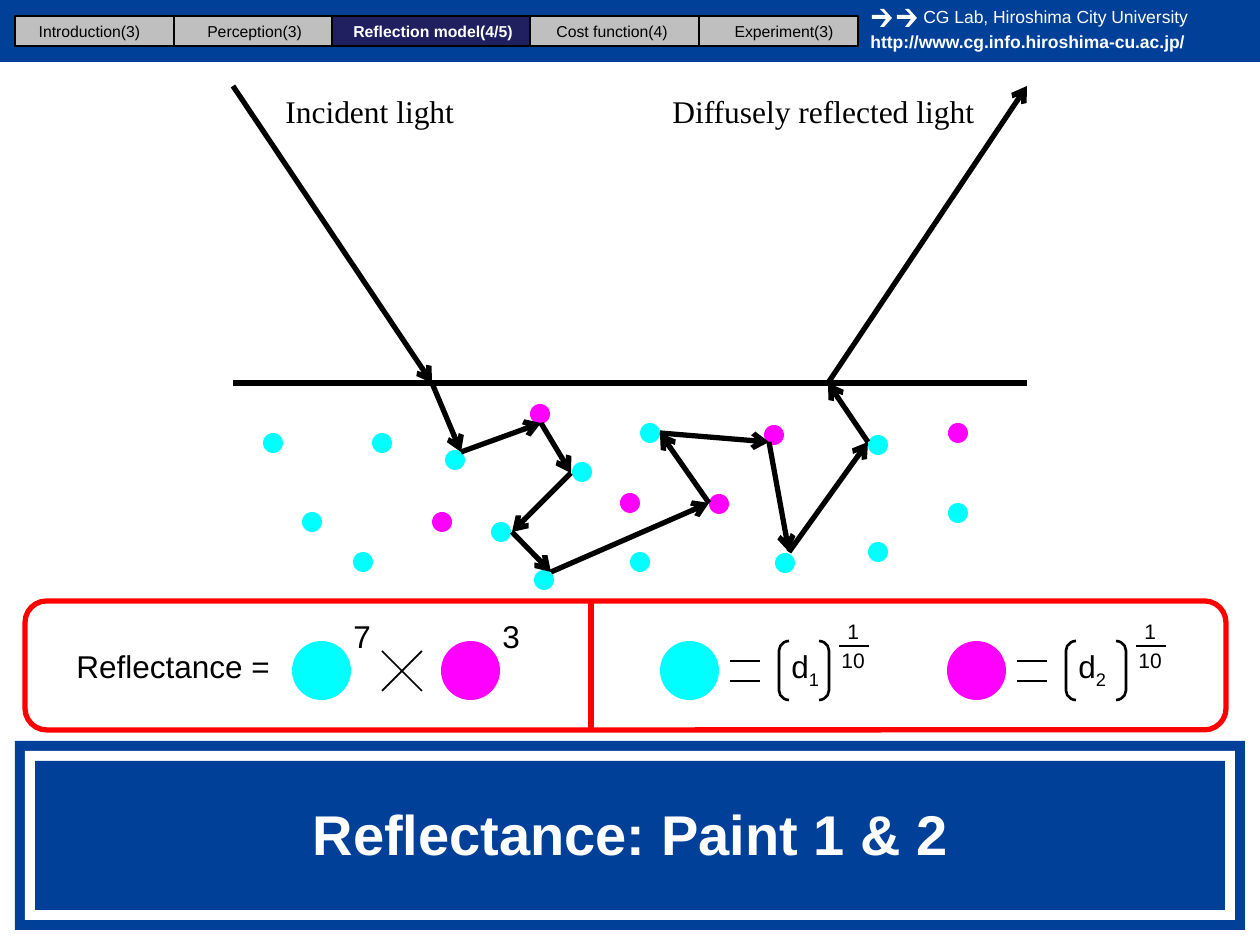
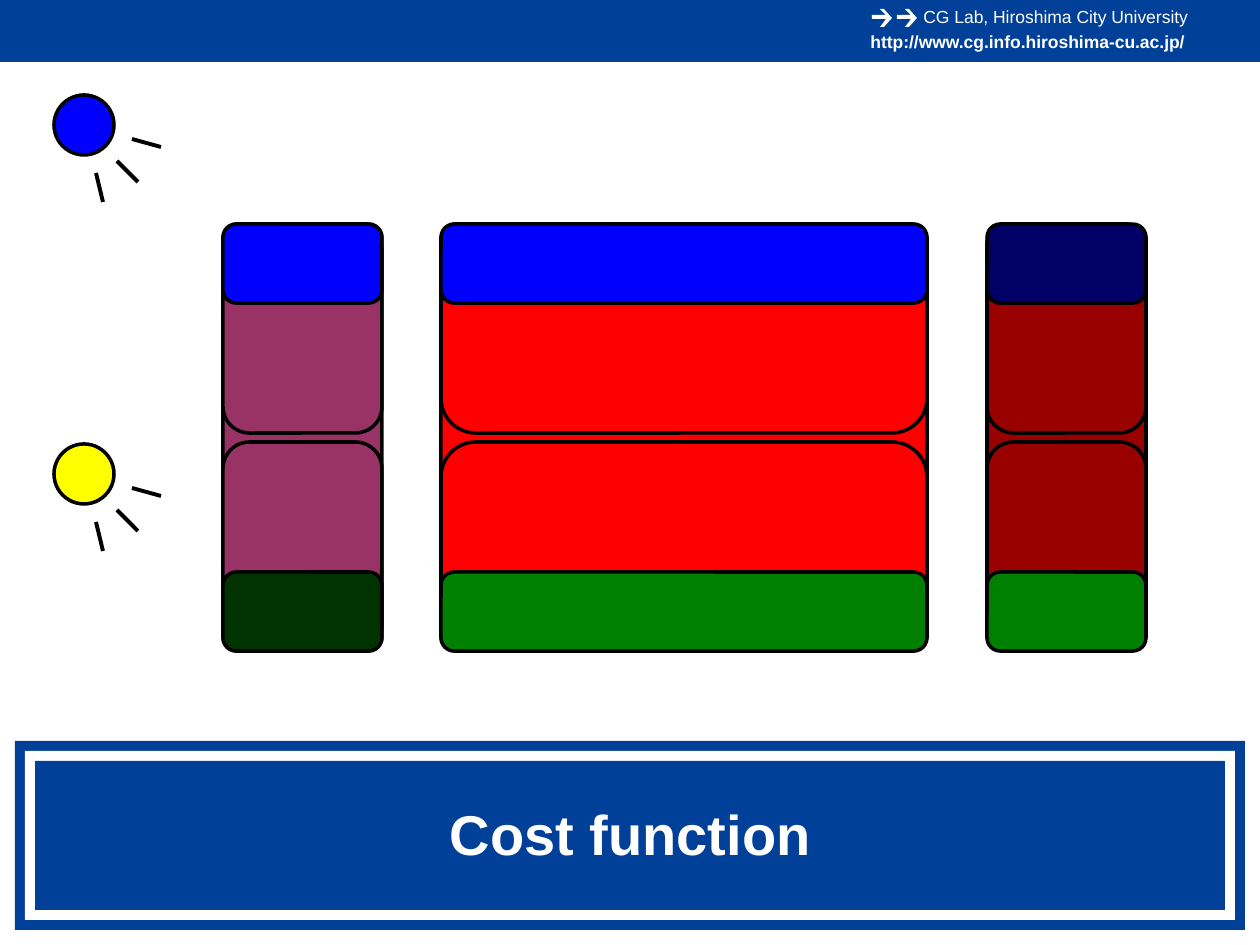
"""Build two slides on paint reflectance and the cost function."""
from itertools import pairwise

from lxml import etree
from pptx import Presentation
from pptx import util as u
from pptx.dml.color import RGBColor
from pptx.enum import shapes, text
from pptx.oxml import ns

PX = 914400 / 126
SANS, SERIF = "Arial", "Times New Roman"
COLOURS = {
    "band": "004098", "white": "FFFFFF", "black": "000000",
    "tab": "BFBFBF", "active": "202060", "frame": "FF0000",
    "cyan": "00FFFF", "magenta": "FF00FF", "yellow": "FFFF00",
    "blue": "0000FF", "navy": "000066", "green": "008000",
    "dark green": "003300", "red": "FF0000", "dark red": "990000",
    "plum": "993366",
}
PRESET = shapes.MSO_SHAPE
CENTER = text.PP_ALIGN.CENTER

LAMP_RAYS = [((49, 107), (42, 78)), ((107, 52), (78, 44)), ((84, 87), (63, 66))]
ARROW_OUTLINE = [(8, 18), (14, 10), (0, 10), (0, 6), (14, 6),
                 (8, 0), (12, 0), (20, 9), (12, 18)]
TABS = [("Introduction(3)", 159, 10, 129), ("Perception(3)", 158, 20, 121),
        ("Reflection model(4/5)", 198, 8, 186), ("Cost function(4)", 169, 11, 142),
        ("Experiment(3)", 159, 20, 130)]
PARTICLES = {
    "cyan": [(445, 450), (868, 435), (640, 423), (491, 522), (572, 462),
             (302, 512), (263, 433), (948, 503), (353, 552), (372, 433),
             (775, 553), (630, 552), (868, 542), (534, 570)],
    "magenta": [(620, 493), (948, 423), (432, 512), (764, 425),
                (709, 494), (530, 404)],
}
LIGHT_PATH = [(233, 86), (432, 383), (461, 452), (541, 423), (571, 473),
              (512, 532), (551, 572), (709, 503), (660, 433), (769, 442),
              (789, 552), (868, 442), (828, 383), (1027, 86)]
COLUMNS = [(441, 486, 0.036, "red", "blue", "green"),
           (987, 159, 0.115, "dark red", "navy", "green"),
           (223, 159, 0.089, "plum", "blue", "dark green")]


def px(*lengths):
    """Turn pixel lengths into EMU."""
    return [u.Emu(round(length * PX)) for length in lengths]


def colour(name):
    """Return a named colour."""
    return RGBColor.from_string(COLOURS[name])


def paint(shape, fill=None, line=None, width=1):
    """Set the fill and outline of a shape and drop its shadow."""
    shape.shadow.inherit = False
    if fill:
        shape.fill.solid()
        shape.fill.fore_color.rgb = colour(fill)
    else:
        shape.fill.background()
    if line:
        shape.line.color.rgb = colour(line)
        shape.line.width = u.Pt(width)
    else:
        shape.line.fill.background()


def add_preset(slide, preset, box, fill=None, line=None, width=1, adjust=None):
    """Add a preset shape in a box of left, top, width, height."""
    shape = slide.shapes.add_shape(preset, *px(*box))
    if adjust is not None:
        shape.adjustments[0] = adjust
    paint(shape, fill, line, width)


def add_line(slide, start, end, width=1, line="black", arrow=False):
    """Add a straight line, with an arrowhead at its end if asked."""
    connector = slide.shapes.add_connector(
        shapes.MSO_CONNECTOR.STRAIGHT, *px(*start, *end))
    connector.line.color.rgb = colour(line)
    connector.line.width = u.Pt(width)
    properties = connector._element.spPr
    etree.SubElement(properties, ns.qn("a:effectLst"))
    if arrow:
        etree.SubElement(connector.line._get_or_add_ln(),
                         ns.qn("a:tailEnd"), type="arrow")


def add_text(slide, box, words, size, ink="black", font=SANS, bold=False,
             align=None, wrap=False, middle=False, subscript=None):
    """Add one line of text, with an optional subscript at its end."""
    shape = slide.shapes.add_textbox(*px(*box))
    frame = shape.text_frame
    frame.word_wrap = wrap
    if middle:
        frame.vertical_anchor = text.MSO_ANCHOR.MIDDLE
    else:
        frame.auto_size = text.MSO_AUTO_SIZE.SHAPE_TO_FIT_TEXT
    paragraph = frame.paragraphs[0]
    paragraph.add_run().text = words
    if subscript:
        run = paragraph.add_run()
        run.text = subscript
        run._r.get_or_add_rPr().set("baseline", "-25000")
    paragraph.alignment = align
    paragraph.font.name = font
    paragraph.font.size = u.Pt(size)
    paragraph.font.bold = bold
    paragraph.font.color.rgb = colour(ink)


def add_header(slide):
    """Draw the top band with the laboratory name and address."""
    add_preset(slide, PRESET.RECTANGLE, (0, 0, 1260, 62), "band")
    for left in (872, 897):
        points = [(left + x, 9 + y) for x, y in ARROW_OUTLINE]
        builder = slide.shapes.build_freeform(*points[0], scale=PX)
        builder.add_line_segments(points[1:], close=True)
        paint(builder.convert_to_shape(), "white")
    add_text(slide, (858, 25, 348, 34), "http://www.cg.info.hiroshima-cu.ac.jp/",
             10, "white", bold=True, wrap=True)
    add_text(slide, (911, 0, 305, 34), "CG Lab, Hiroshima City University",
             10, "white", wrap=True)


def add_title(slide, title):
    """Draw the framed title panel at the foot of the slide."""
    for inset, fill in ((0, "band"), (10, "white"), (20, "band")):
        box = (15 + inset, 741 + inset, 1230 - 2 * inset, 189 - 2 * inset)
        add_preset(slide, PRESET.RECTANGLE, box, fill)
    add_text(slide, (35, 760, 1191, 147), title, 32, "white", bold=True,
             align=CENTER, wrap=True, middle=True)


def add_tabs(slide, left, top, active):
    """Draw the row of section tabs with one of them active."""
    for name, width, label_inset, label_width in TABS:
        chosen = name == active
        add_preset(slide, PRESET.RECTANGLE, (left, top, width, 30),
                   "active" if chosen else "tab", "black", 1.5)
        add_text(slide, (left + label_inset, top, label_width, 32), name, 9,
                 "white" if chosen else "black", bold=chosen, align=CENTER)
        left += width


def add_scattering(slide):
    """Draw paint particles and the light path that bounces between them."""
    for fill, corners in PARTICLES.items():
        for corner in corners:
            add_preset(slide, PRESET.OVAL, (*corner, 20, 20), fill)
    add_line(slide, (233, 383), (1027, 383), 3)
    for start, end in pairwise(LIGHT_PATH):
        add_line(slide, start, end, 3, arrow=True)
    add_text(slide, (273, 86, 197, 50), "Incident light", 18, font=SERIF)
    add_text(slide, (660, 86, 339, 50), "Diffusely reflected light", 18, font=SERIF)


def add_paint_equation(slide, left, top, fill, index, closing):
    """Draw a paint disc equal to a bracketed density to the power 1/10."""
    add_preset(slide, PRESET.OVAL, (left, top, 59, 59), fill)
    for offset in (20, 40):
        add_line(slide, (left + 70, top + offset), (left + 100, top + offset))
    for preset, offset in ((PRESET.LEFT_BRACKET, 119), (PRESET.RIGHT_BRACKET, closing)):
        add_preset(slide, preset, (left + offset, top, 10, 59),
                   line="black", width=1.5, adjust=0.963)
    add_text(slide, (left + 119, top, 55, 50), "d", 18, subscript=index)
    power = left + closing + 10
    add_text(slide, (power + 6, top - 29, 37, 38), "1", 12)
    add_text(slide, (power, top, 49, 38), "10", 12)
    add_line(slide, (power + 10, top + 5), (power + 40, top + 5))


def add_formula_panel(slide, left, top, width, height):
    """Draw the framed reflectance formula and its two definitions."""
    row = top + 40
    add_text(slide, (left + 39, row, 220, 50), "Reflectance =", 18)
    for offset, fill, power in ((267, "cyan", "7"), (416, "magenta", "3")):
        add_preset(slide, PRESET.OVAL, (left + offset, row, 59, 59), fill)
        add_text(slide, (left + offset + 49, row - 30, 43, 50), power, 18)
    for start, end in ((10, 50), (50, 10)):
        add_line(slide, (left + 357, row + start), (left + 397, row + end))
    add_paint_equation(slide, left + 635, row, "cyan", "1", 159)
    add_paint_equation(slide, left + 922, row, "magenta", "2", 169)
    add_preset(slide, PRESET.ROUNDED_RECTANGLE, (left, top, width, height),
               line="frame", width=3)
    add_line(slide, (left + 566, top), (left + 566, top + height), 3, "frame")


def add_lamp(slide, left, top, fill):
    """Draw a round lamp with three rays."""
    add_preset(slide, PRESET.OVAL, (left, top, 60, 60), fill, "black", 2)
    for ray in LAMP_RAYS:
        start, end = ((left + x, top + y) for x, y in ray)
        add_line(slide, start, end, 2.25)


def add_column(slide, left, top, width, height, adjust, body, upper, lower):
    """Draw a column of two halves with a coloured cap at each end."""
    half, cap = 209, 79
    for offset, part, fill, corner in (
            (0, height, body, adjust),
            (height - half, half, body, None), (0, half, body, None),
            (height - cap, cap, lower, None), (0, cap, upper, None)):
        add_preset(slide, PRESET.ROUNDED_RECTANGLE, (left, top + offset, width, part),
                   fill, "black", 2, corner)


def start_slide(presentation, title):
    """Add a blank slide with the shared header and title."""
    slide = presentation.slides.add_slide(presentation.slide_layouts[6])
    add_header(slide)
    add_title(slide, title)
    return slide


def build_reflectance(presentation):
    """Build the slide on the reflectance of two paints."""
    slide = start_slide(presentation, "Reflectance: Paint 1 & 2")
    add_scattering(slide)
    add_formula_panel(slide, 25, 601, 1201, 129)
    add_tabs(slide, 15, 16, "Reflection model(4/5)")


def build_cost_function(presentation):
    """Build the slide on the cost function."""
    slide = start_slide(presentation, "Cost function")
    for left, width, *style in COLUMNS:
        add_column(slide, left, 224, width, 427, *style)
    add_lamp(slide, 54, 95, "blue")
    add_lamp(slide, 54, 444, "yellow")


def main():
    """Build and save the presentation."""
    presentation = Presentation()
    presentation.slide_width, presentation.slide_height = px(1260, 945)
    build_reflectance(presentation)
    build_cost_function(presentation)
    presentation.save("out.pptx")


if __name__ == "__main__":
    main()
